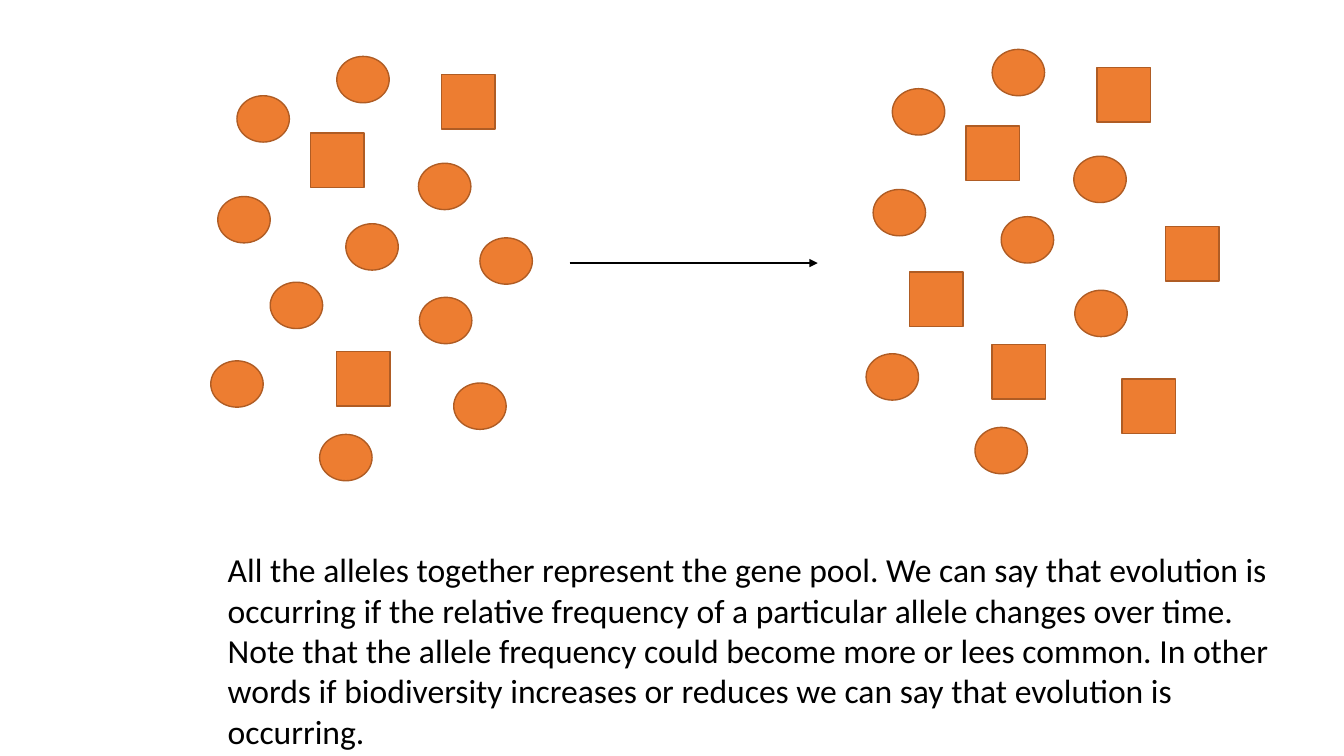
"""Draw two gene pools, before and after a change in allele frequency."""
from dataclasses import dataclass

import pptx
import pptx.dml.color
import pptx.enum.dml
import pptx.enum.shapes
import pptx.enum.text
import pptx.util
from lxml import etree
from pptx.oxml.ns import qn

PX = 9144
OVAL = pptx.enum.shapes.MSO_SHAPE.OVAL
SQUARE = pptx.enum.shapes.MSO_SHAPE.RECTANGLE
ALLELE_SIZE = {OVAL: (52, 46), SQUARE: (53, 54)}

SHARED_ALLELES = [
    (OVAL, [(235, 95), (415, 162), (334, 56), (216, 195),
            (343, 222), (317, 431), (416, 295), (209, 358)]),
    (SQUARE, [(308, 132), (438, 74), (334, 349)]),
]
ALLELES_BEFORE = (OVAL, [(268, 280), (450, 380), (476, 236)])
ALLELES_AFTER = (SQUARE, [(252, 277), (506, 232), (463, 383)])
EXPLANATION = (
    "All the alleles together represent the gene pool. We can say that evolution is "
    "occurring if the relative frequency of a particular allele changes over time. "
    "Note that the allele frequency could become more or lees common. In other words "
    "if biodiversity increases or reduces we can say that evolution is occurring."
)


@dataclass(frozen=True)
class Theme:
    """Colours, type and line widths of the slide."""
    allele: str = "ED7D31"
    outline: str = "AF5C24"
    ink: str = "000000"
    font: str = "Calibri"
    body_size: float = 24
    outline_width: float = 1
    arrow_width: float = 1.5


class Canvas:
    """Places themed elements on one slide, measured in px."""

    def __init__(self, slide, theme):
        self.shapes = slide.shapes
        self.theme = theme

    def set_line(self, line, color, width):
        """Give a line its colour and width."""
        line.color.rgb = pptx.dml.color.RGBColor.from_string(color)
        line.width = pptx.util.Pt(width)

    def allele(self, kind, x, y):
        """Add one allele with its top left corner at x, y."""
        width, height = ALLELE_SIZE[kind]
        allele = self.shapes.add_shape(kind, x * PX, y * PX, width * PX, height * PX)
        allele.shadow.inherit = False
        allele.fill.solid()
        allele.fill.fore_color.rgb = pptx.dml.color.RGBColor.from_string(self.theme.allele)
        self.set_line(allele.line, self.theme.outline, self.theme.outline_width)

    def gene_pool(self, groups, dx=0, dy=0):
        """Add groups of alleles, shifted by dx, dy."""
        for kind, places in groups:
            for x, y in places:
                self.allele(kind, x + dx, y + dy)

    def arrow(self, x1, y1, x2, y2):
        """Add a straight arrow that points at x2, y2."""
        arrow = self.shapes.add_connector(
            pptx.enum.shapes.MSO_CONNECTOR.STRAIGHT, x1 * PX, y1 * PX, x2 * PX, y2 * PX)
        self.set_line(arrow.line, self.theme.ink, self.theme.arrow_width)
        etree.SubElement(arrow.line._get_or_add_ln(), qn("a:tailEnd"), type="triangle")
        etree.SubElement(arrow._element.spPr, qn("a:effectLst"))

    def text(self, words, x, y, width, height):
        """Add a wrapped paragraph of body text."""
        box = self.shapes.add_textbox(x * PX, y * PX, width * PX, height * PX)
        box.text_frame.word_wrap = True
        box.text_frame.auto_size = pptx.enum.text.MSO_AUTO_SIZE.SHAPE_TO_FIT_TEXT
        paragraph = box.text_frame.paragraphs[0]
        paragraph.text = words
        paragraph.font.name = self.theme.font
        paragraph.font.size = pptx.util.Pt(self.theme.body_size)
        paragraph.font.color.rgb = pptx.dml.color.RGBColor.from_string(self.theme.ink)


def main():
    """Build and save the slide."""
    deck = pptx.Presentation()
    deck.slide_width = pptx.util.Inches(13.33)
    deck.slide_height = pptx.util.Inches(7.5)
    canvas = Canvas(deck.slides.add_slide(deck.slide_layouts[6]), Theme())
    canvas.gene_pool(SHARED_ALLELES + [ALLELES_BEFORE])
    canvas.text(EXPLANATION, 216, 540, 1067, 212)
    canvas.arrow(565, 261, 811, 261)
    canvas.gene_pool(SHARED_ALLELES + [ALLELES_AFTER], dx=650, dy=-7)
    deck.save("out.pptx")


if __name__ == "__main__":
    main()
